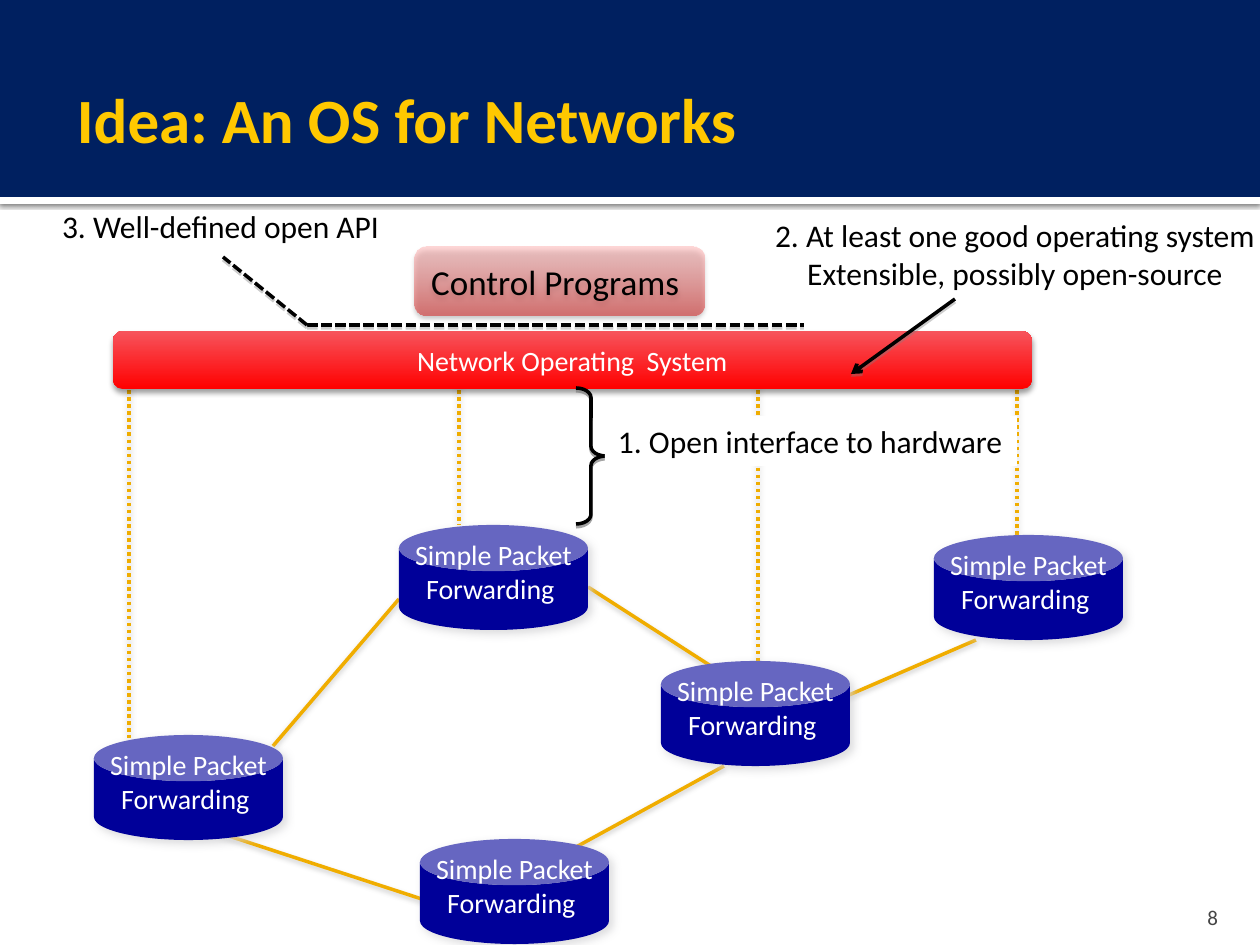
from dataclasses import dataclass
from typing import NamedTuple, Optional

from pptx import Presentation
from pptx import util as u
from pptx.dml.color import RGBColor
from pptx.enum import dml, shapes, text
from pptx.oxml import xmlchemy as xml

SCALE = 914400 / 126


def px(length: int) -> int:
    return round(length * SCALE)


class Shadow(NamedTuple):
    color: str
    alpha: int
    blur: float
    distance: float
    angle: int


class Stop(NamedTuple):
    color: str
    alpha: int = 100


class Rect(NamedTuple):
    left: int
    top: int
    width: int
    height: int


class Insets(NamedTuple):
    left: int = 13
    top: int = 6
    right: int = 13
    bottom: int = 6


@dataclass(frozen=True)
class Theme:
    font: str = "Calibri"
    white: str = "FFFFFF"
    black: str = "000000"
    navy: str = "002060"
    gold: str = "FFC800"
    link: str = "F0AD00"
    switch: str = "000099"
    grey: str = "454545"
    title_size: int = 36
    program_size: int = 20
    note_size: int = 18
    label_size: int = 16
    number_size: int = 12
    line_width: int = 2
    system_fill: tuple = (Stop("FF0000"), Stop("F7545C"))
    program_fill: tuple = (Stop("D93534", 60), Stop("FFA7A7", 45))
    band_shadow: Shadow = Shadow("000000", 60, 2.5, 0.8, 90)
    box_shadow: Shadow = Shadow("000000", 38, 3.1, 2, 90)
    switch_shadow: Shadow = Shadow("D4D4D6", 75, 5, 3, 45)
    link_shadow: Shadow = Shadow("808080", 38, 3.1, 1.6, 90)
    mark_shadow: Shadow = Shadow("808080", 38, 0, 1.6, 90)
    brace_shadow: Shadow = Shadow("808080", 69, 0, 1.6, 90)


@dataclass(frozen=True)
class Line:
    start: tuple[int, int]
    end: tuple[int, int]
    color: str
    shadow: Shadow
    dash: Optional[dml.MSO_LINE] = None
    arrow: bool = False


THEME = Theme()
SHAPE = shapes.MSO_SHAPE
ALIGN = text.PP_ALIGN
ANCHOR = text.MSO_ANCHOR


def add_node(parent, tag: str, **attributes):
    node = xml.OxmlElement(tag)
    for name, value in attributes.items():
        node.set(name, str(value))
    parent.append(node)
    return node


def cast_shadow(effects, shadow: Shadow) -> None:
    outer = add_node(effects, "a:outerShdw", blurRad=u.Pt(shadow.blur), dist=u.Pt(shadow.distance),
                     dir=shadow.angle * 60000, algn="ctr", rotWithShape=0)
    color = add_node(outer, "a:srgbClr", val=shadow.color)
    add_node(color, "a:alpha", val=shadow.alpha * 1000)


def add_line(slide, line: Line) -> None:
    connector = slide.shapes.add_connector(
        shapes.MSO_CONNECTOR.STRAIGHT, *map(px, line.start + line.end))
    connector.line.color.rgb = RGBColor.from_string(line.color)
    connector.line.width = u.Pt(THEME.line_width)
    if line.dash:
        connector.line.dash_style = line.dash
    if line.arrow:
        add_node(connector.element.xpath(".//a:ln")[0], "a:tailEnd", type="arrow")
    cast_shadow(add_node(connector.element.spPr, "a:effectLst"), line.shadow)


def add_box(slide, kind, rect: Rect, fill=None, shadow: Optional[Shadow] = None,
            outline: Optional[str] = None):
    box = slide.shapes.add_shape(kind, *map(px, rect))
    if fill is None:
        box.fill.background()
    elif isinstance(fill, str):
        box.fill.solid()
        box.fill.fore_color.rgb = RGBColor.from_string(fill)
    else:
        box.fill.gradient()
        box.fill.gradient_angle = 90
        for stop, source in zip(box.fill.gradient_stops, fill):
            stop.color.rgb = RGBColor.from_string(source.color)
        for color, source in zip(box.element.xpath(".//a:gs/a:srgbClr"), fill):
            add_node(color, "a:alpha", val=source.alpha * 1000)
    if outline:
        box.line.color.rgb = RGBColor.from_string(outline)
        box.line.width = u.Pt(THEME.line_width)
    else:
        box.line.fill.background()
    box.shadow.inherit = False
    if shadow:
        cast_shadow(box.element.xpath("./p:spPr/a:effectLst")[0], shadow)
    return box


def write(box, lines: list[str], size: int, color: str, align=ALIGN.LEFT, anchor=ANCHOR.MIDDLE,
          insets: Insets = Insets(), wrap: bool = True, bold: bool = False) -> None:
    frame = box.text_frame
    frame.word_wrap = wrap
    frame.vertical_anchor = anchor
    frame.margin_left, frame.margin_top, frame.margin_right, frame.margin_bottom = map(px, insets)
    for index, words in enumerate(lines):
        para = frame.add_paragraph() if index else frame.paragraphs[0]
        para.alignment = align
        span = para.add_run()
        span.text = words
        span.font.name = THEME.font
        span.font.size = u.Pt(size)
        span.font.bold = bold
        span.font.color.rgb = RGBColor.from_string(color)


def add_note(slide, rect: Rect, lines: list[str], align=ALIGN.LEFT) -> None:
    box = slide.shapes.add_textbox(*map(px, rect))
    write(box, lines, THEME.note_size, THEME.black, align, ANCHOR.TOP, wrap=False)


def add_switch(slide, left: int, top: int) -> None:
    can = add_box(slide, SHAPE.CAN, Rect(left, top, 189, 105), THEME.switch, THEME.switch_shadow)
    can.adjustments[0] = 0.44
    write(can, ["Simple Packet", "Forwarding "], THEME.label_size, THEME.white, ALIGN.CENTER,
          ANCHOR.BOTTOM, Insets(bottom=2), wrap=False)


def add_header(slide) -> None:
    title = slide.shapes.title
    title.left, title.top, title.width, title.height = map(px, Rect(63, 32, 1134, 172))
    write(title, ["Idea: An OS for Networks"], THEME.title_size, THEME.gold,
          insets=Insets(left=14, right=6), bold=True)
    rule = add_box(slide, SHAPE.RECTANGLE, Rect(0, 197, 1260, 7), THEME.white, THEME.band_shadow)
    band = add_box(slide, SHAPE.RECTANGLE, Rect(0, 0, 1260, 197), THEME.navy)
    for part in (rule, band):
        title.element.addprevious(part.element)


def add_network(slide) -> None:
    links = [((273, 746), (399, 599)), ((588, 587), (714, 668)), ((547, 863), (724, 766)),
             ((186, 822), (440, 905)), ((819, 708), (976, 640))]
    for start, end in links:
        add_line(slide, Line(start, end, THEME.link, THEME.link_shadow))
    for x, bottom in [(129, 738), (459, 525), (758, 668), (1017, 552)]:
        add_line(slide, Line((x, 355), (x, bottom), THEME.link, THEME.link_shadow,
                             dml.MSO_LINE.ROUND_DOT))
    system = add_box(slide, SHAPE.ROUNDED_RECTANGLE, Rect(113, 331, 919, 58),
                     THEME.system_fill, THEME.box_shadow)
    write(system, ["Network Operating  System"], THEME.label_size, THEME.white, ALIGN.CENTER)
    program = add_box(slide, SHAPE.ROUNDED_RECTANGLE, Rect(415, 247, 289, 68),
                      THEME.program_fill, THEME.box_shadow)
    write(program, ["Control Programs"], THEME.program_size, THEME.black)
    for left, top in [(399, 525), (661, 661), (934, 535), (420, 839), (94, 735)]:
        add_switch(slide, left, top)


def add_annotations(slide) -> None:
    corner = (307, 325)
    for end in [(804, 325), (223, 257)]:
        add_line(slide, Line(corner, end, THEME.black, THEME.mark_shadow,
                             dml.MSO_LINE.SQUARE_DOT))
    add_note(slide, Rect(49, 201, 345, 50), ["3. Well-defined open API"])
    brace = add_box(slide, SHAPE.RIGHT_BRACE, Rect(576, 388, 30, 136),
                    shadow=THEME.brace_shadow, outline=THEME.black)
    brace.adjustments[0] = 0.32
    label = add_box(slide, SHAPE.RECTANGLE, Rect(605, 416, 412, 50), THEME.white)
    write(label, ["1. Open interface to hardware"], THEME.note_size, THEME.black,
          anchor=ANCHOR.TOP)
    add_note(slide, Rect(760, 210, 510, 89),
             ["2. At least one good operating system", "Extensible, possibly open-source"],
             ALIGN.CENTER)
    add_line(slide, Line((955, 299), (851, 374), THEME.black, THEME.mark_shadow, arrow=True))
    number = slide.shapes.add_textbox(*map(px, Rect(1130, 892, 101, 38)))
    write(number, ["8"], THEME.number_size, THEME.grey, ALIGN.RIGHT, ANCHOR.BOTTOM,
          Insets(bottom=0))


def main() -> None:
    deck = Presentation()
    deck.slide_width, deck.slide_height = px(1260), px(945)
    page = deck.slides.add_slide(deck.slide_layouts[5])
    add_header(page)
    add_network(page)
    add_annotations(page)
    deck.save("out.pptx")


if __name__ == "__main__":
    main()
